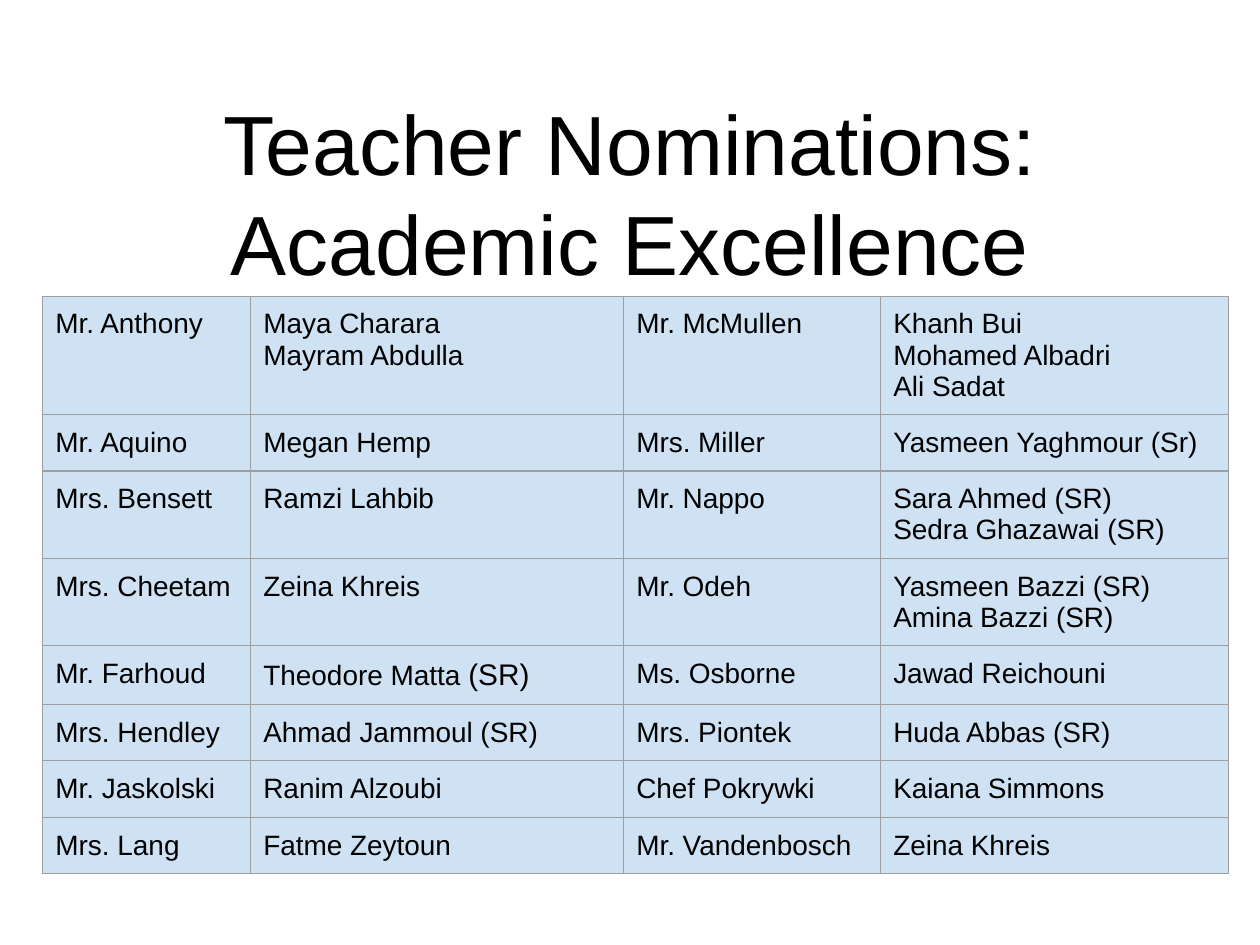
"""Build the slide of teacher nominations for academic excellence."""
from lxml import etree
from pptx import Presentation
from pptx import util as u
from pptx.dml.color import RGBColor
from pptx.enum import text
from pptx.oxml import ns

COLORS = {"ink": "000000", "cell": "CFE2F3", "border": "9E9E9E"}
FONT = "Arial"
COLUMN_WIDTHS = [1.65, 2.96, 2.04, 2.76]
ROW_HEIGHT = 0.42
NOMINATIONS = [
    ("Mr. Anthony", "Maya Charara\nMayram Abdulla",
     "Mr. McMullen", "Khanh Bui\nMohamed Albadri\nAli Sadat"),
    ("Mr. Aquino", "Megan Hemp", "Mrs. Miller", "Yasmeen Yaghmour (Sr)"),
    ("Mrs. Bensett", "Ramzi Lahbib", "Mr. Nappo", "Sara Ahmed (SR)\nSedra Ghazawai (SR)"),
    ("Mrs. Cheetam", "Zeina Khreis", "Mr. Odeh", "Yasmeen Bazzi (SR)\nAmina Bazzi (SR)"),
    ("Mr. Farhoud", "Theodore Matta ", "Ms. Osborne", "Jawad Reichouni"),
    ("Mrs. Hendley", "Ahmad Jammoul (SR)", "Mrs. Piontek", "Huda Abbas (SR)"),
    ("Mr. Jaskolski", "Ranim Alzoubi", "Chef Pokrywki", "Kaiana Simmons"),
    ("Mrs. Lang", "Fatme Zeytoun", "Mr. Vandenbosch", "Zeina Khreis"),
]


def style_runs(frame, size):
    for paragraph in frame.paragraphs:
        for run in paragraph.runs:
            run.font.name = FONT
            run.font.size = u.Pt(size)
            run.font.color.rgb = RGBColor.from_string(COLORS["ink"])


def add_borders(cell):
    properties = cell._tc.get_or_add_tcPr()
    for position, side in enumerate(("lnL", "lnR", "lnT", "lnB")):
        line = etree.Element(ns.qn(f"a:{side}"), w=str(u.Pt(0.75)))
        fill = etree.SubElement(line, ns.qn("a:solidFill"))
        etree.SubElement(fill, ns.qn("a:srgbClr"), val=COLORS["border"])
        properties.insert(position, line)


deck = Presentation()
deck.slide_width, deck.slide_height = u.Inches(10), u.Inches(7.5)
slide = deck.slides.add_slide(deck.slide_layouts[5])

heading = slide.shapes.title
heading.left, heading.top = u.Inches(0.04), u.Inches(0.64)
heading.width, heading.height = u.Inches(9.92), u.Inches(2.56)
heading_frame = heading.text_frame
heading_frame.text = "Teacher Nominations:\nAcademic Excellence"
heading_frame.auto_size = text.MSO_AUTO_SIZE.NONE
heading_frame.vertical_anchor = text.MSO_ANCHOR.TOP
heading_frame.margin_top = u.Inches(0.09)
for line in heading_frame.paragraphs:
    line.alignment = text.PP_ALIGN.CENTER
    line.line_spacing = u.Pt(57.2)
style_runs(heading_frame, 48)

nominations = slide.shapes.add_table(
    len(NOMINATIONS), len(COLUMN_WIDTHS), u.Inches(0.34), u.Inches(2.35),
    u.Inches(sum(COLUMN_WIDTHS)), u.Inches(ROW_HEIGHT * len(NOMINATIONS))).table
nominations.first_row = nominations.horz_banding = False
for column, width in zip(nominations.columns, COLUMN_WIDTHS):
    column.width = u.Inches(width)

for row, names in enumerate(NOMINATIONS):
    for column, name in enumerate(names):
        cell = nominations.cell(row, column)
        cell.text_frame.text = name
        cell.margin_left = cell.margin_right = u.Inches(0.1)
        cell.margin_top = cell.margin_bottom = u.Inches(0.1)
        cell.fill.solid()
        cell.fill.fore_color.rgb = RGBColor.from_string(COLORS["cell"])
        add_borders(cell)
        style_runs(cell.text_frame, 16)

senior_frame = nominations.cell(4, 1).text_frame
senior_mark = senior_frame.paragraphs[0].add_run()
senior_mark.text = "(SR)"
style_runs(senior_frame, 16)
senior_mark.font.size = u.Pt(17)

deck.save("out.pptx")
